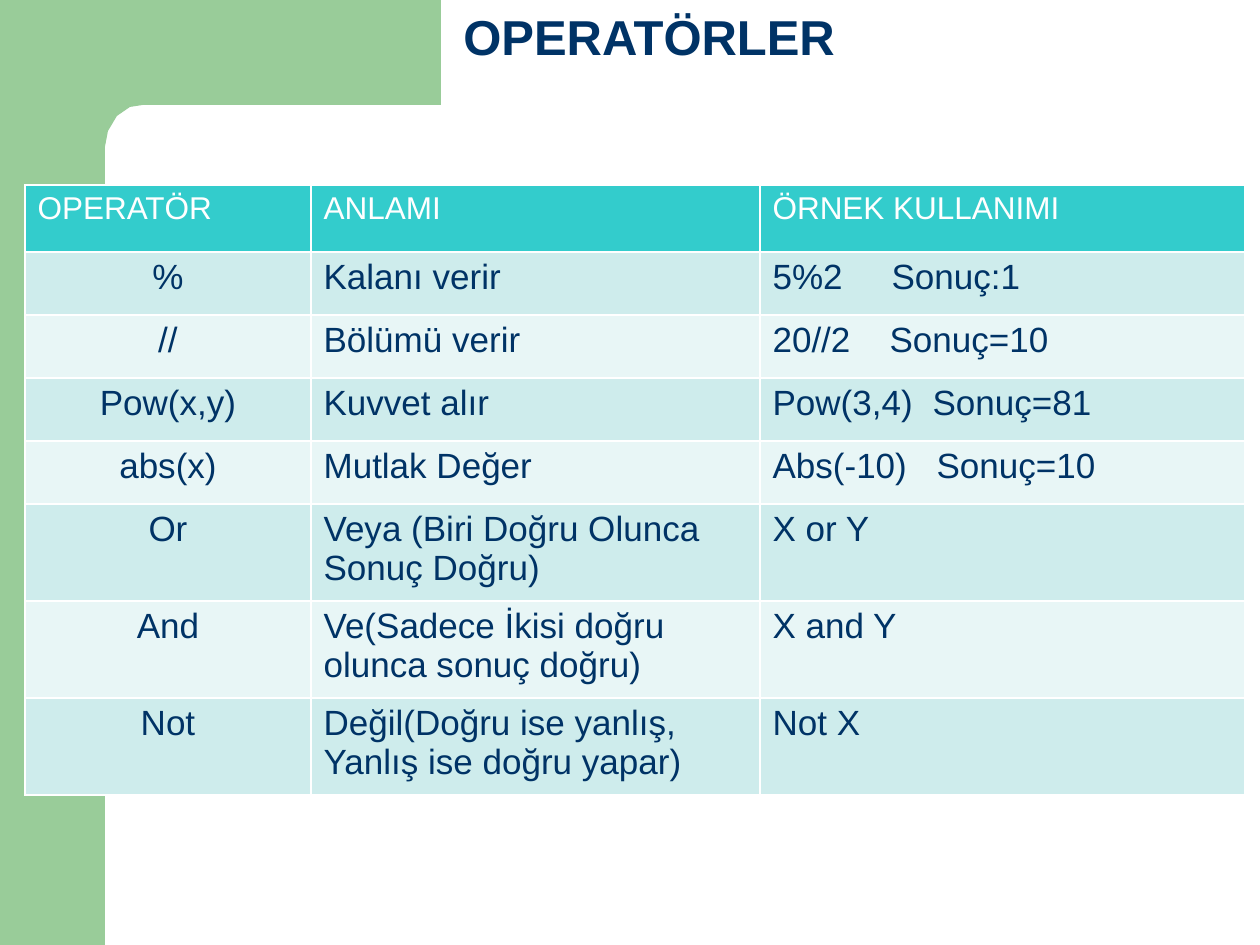
"""Build the slide that lists Python operators in a table."""
from dataclasses import dataclass

from lxml import etree
from pptx import Presentation
from pptx import util as u
from pptx.dml.color import RGBColor
from pptx.enum import shapes, text
from pptx.oxml.ns import qn

PX = 914400 / 126
GREEN, NAVY, TEAL, WHITE = "99CC99", "003366", "33CCCC", "FFFFFF"
BANDS = ("CEECEC", "E8F6F6")
COLUMN_WIDTHS = (286, 449, 485)
ROW_HEIGHTS = (67, *[63] * 4, *[97] * 3)
HEADINGS = ("OPERATÖR", "ANLAMI", "ÖRNEK KULLANIMI")
CORNER = (
    (441, 0), (441, 105), (143, 105), (130, 107), (117, 116),
    (108, 131), (105, 147), (105, 161), (63, 161), (63, 0),
)


@dataclass(frozen=True)
class Operator:
    symbol: str
    meaning: str
    example: str
    tab: int = 0


OPERATORS = (
    Operator("%", "Kalanı verir", "5%2\tSonuç:1", 119),
    Operator("//", "Bölümü verir", "20//2\tSonuç=10", 117),
    Operator("Pow(x,y)", "Kuvvet alır", "Pow(3,4)\tSonuç=81", 160),
    Operator("abs(x)", "Mutlak Değer", "Abs(-10)\tSonuç=10", 164),
    Operator("Or", "Veya (Biri Doğru Olunca Sonuç Doğru)", "X or Y"),
    Operator("And", "Ve(Sadece İkisi doğru olunca sonuç doğru)", "X and Y"),
    Operator("Not", "Değil(Doğru ise yanlış, Yanlış ise doğru yapar)", "Not X"),
)


def px(length: int) -> u.Emu:
    return u.Emu(round(length * PX))


def colour(value: str) -> RGBColor:
    return RGBColor.from_string(value)


def write(paragraph, words: str, size: int, hex_colour: str, bold: bool = False) -> None:
    run = paragraph.add_run()
    run.text = words
    for name, value in {"name": "Arial", "size": u.Pt(size), "bold": bold}.items():
        setattr(run.font, name, value)
    run.font.color.rgb = colour(hex_colour)


def paint(shape, hex_colour: str) -> None:
    shape.shadow.inherit = False
    shape.fill.solid()
    shape.fill.fore_color.rgb = colour(hex_colour)
    shape.line.fill.background()


def add_frame(slide) -> None:
    bar = slide.shapes.add_shape(shapes.MSO_SHAPE.RECTANGLE, 0, 0, px(105), px(945))
    paint(bar, GREEN)
    builder = slide.shapes.build_freeform(*CORNER[0], scale=PX)
    builder.add_line_segments(CORNER[1:], close=True)
    paint(builder.convert_to_shape(), GREEN)


def add_title(slide, words: str) -> None:
    frame = slide.shapes.add_textbox(px(451), 0, px(809), px(69)).text_frame
    frame.word_wrap = True
    paragraph = frame.paragraphs[0]
    paragraph.space_before = u.Pt(5.6)
    write(paragraph, words, 28, NAVY, bold=True)


def add_tab_stop(paragraph, position: int) -> None:
    properties = paragraph._p.get_or_add_pPr()
    stops = etree.SubElement(properties, qn("a:tabLst"))
    etree.SubElement(stops, qn("a:tab"), pos=str(px(position)), algn="l")


def add_borders(cell) -> None:
    properties = cell._tc.get_or_add_tcPr()
    for index, side in enumerate(("lnL", "lnR", "lnT", "lnB")):
        line = etree.Element(qn(f"a:{side}"), w=str(u.Pt(1)))
        fill = etree.SubElement(line, qn("a:solidFill"))
        etree.SubElement(fill, qn("a:srgbClr"), val=WHITE)
        properties.insert(index, line)


def fill_cell(cell, words: str, size: int, ink: str, background: str):
    cell.fill.solid()
    cell.fill.fore_color.rgb = colour(background)
    add_borders(cell)
    paragraph = cell.text_frame.paragraphs[0]
    write(paragraph, words, size, ink)
    return paragraph


def add_operator_table(slide) -> None:
    table = slide.shapes.add_table(
        len(ROW_HEIGHTS), len(COLUMN_WIDTHS), px(25), px(185),
        px(sum(COLUMN_WIDTHS)), px(sum(ROW_HEIGHTS)),
    ).table
    for column, width in zip(table.columns, COLUMN_WIDTHS):
        column.width = px(width)
    for row, height in zip(table.rows, ROW_HEIGHTS):
        row.height = px(height)
    for index, heading in enumerate(HEADINGS):
        fill_cell(table.cell(0, index), heading, 18, WHITE, TEAL)
    for row, operator in enumerate(OPERATORS, 1):
        values = (operator.symbol, operator.meaning, operator.example)
        symbol, _, example = [
            fill_cell(table.cell(row, column), value, 20, NAVY, BANDS[(row - 1) % 2])
            for column, value in enumerate(values)
        ]
        symbol.alignment = text.PP_ALIGN.CENTER
        if operator.tab:
            add_tab_stop(example, operator.tab)


def main() -> None:
    presentation = Presentation()
    for name, value in {"slide_width": px(1260), "slide_height": px(945)}.items():
        setattr(presentation, name, value)
    slide = presentation.slides.add_slide(presentation.slide_layouts[6])
    add_frame(slide)
    add_title(slide, "OPERATÖRLER")
    add_operator_table(slide)
    presentation.save("out.pptx")


if __name__ == "__main__":
    main()
